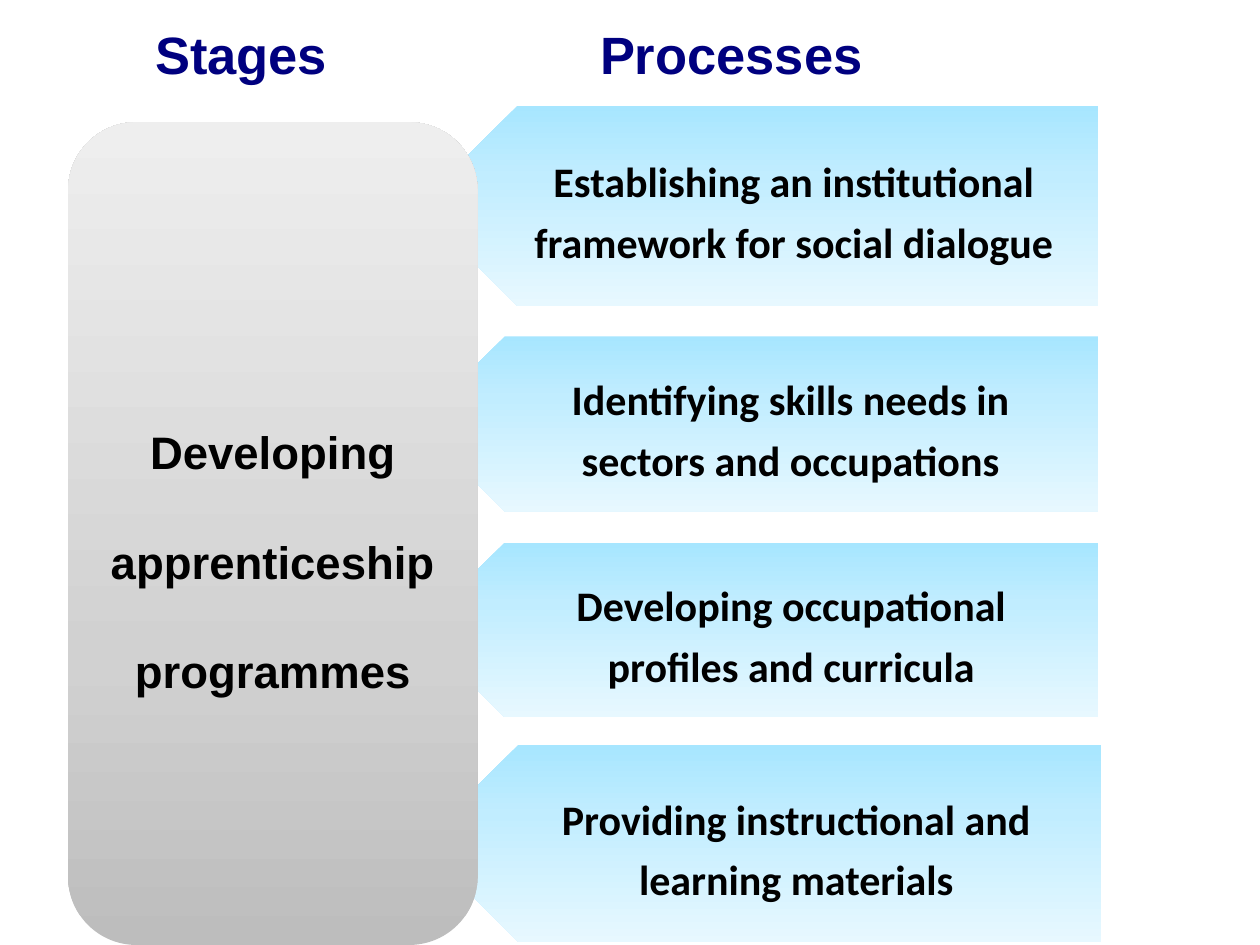
from copy import deepcopy

from pptx import Presentation
from pptx import util as u
from pptx.dml.color import RGBColor
from pptx.enum import shapes, text
from pptx.oxml.ns import qn

NAVY = RGBColor(0x00, 0x00, 0x7F)
BLACK = RGBColor(0x00, 0x00, 0x00)
BLUES = [RGBColor(0xA7, 0xE6, 0xFF), RGBColor(0xC1, 0xED, 0xFF), RGBColor(0xE7, 0xF8, 0xFF)]
GREYS = [RGBColor(0xBD, 0xBD, 0xBD), RGBColor(0xD1, 0xD1, 0xD1), RGBColor(0xEE, 0xEE, 0xEE)]
STOP_POSITIONS = [0, 0.35, 1]

HEADING = {"name": "Arial", "size": u.Pt(30), "bold": True}
STAGE = {"name": "Arial", "size": u.Pt(26), "bold": True}
PROCESS = {"name": "Calibri", "size": u.Pt(24), "bold": True}

HEADINGS = [("Stages", 0.25), ("Processes", 4.14)]
# Wording, arrow left, text left, top, height
PROCESSES = [
    ("Establishing an institutional framework for social dialogue", 3.31, 3.70, 0.84, 1.59),
    ("Identifying skills needs in sectors and occupations", 3.31, 3.65, 2.67, 1.39),
    ("Developing occupational profiles and curricula", 3.31, 3.66, 4.31, 1.38),
    ("Providing instructional and learning materials", 3.33, 3.72, 5.91, 1.57),
]
ARROW_WIDTH = 5.41


def set_all(target, values):
    for name, value in values.items():
        setattr(target, name, value)


def write_text(shape, wording, font, color, line_spacing, **frame_format):
    frame = shape.text_frame
    set_all(frame, {"word_wrap": True, **frame_format})
    paragraph = frame.paragraphs[0]
    set_all(paragraph, {"alignment": text.PP_ALIGN.CENTER, "line_spacing": line_spacing})
    run = paragraph.add_run()
    run.text = wording
    set_all(run.font, font)
    run.font.color.rgb = color


def add_text_box(slide, box):
    return slide.shapes.add_textbox(*map(u.Inches, box))


def add_gradient_shape(slide, kind, box, colors):
    shape = slide.shapes.add_shape(kind, *map(u.Inches, box))
    shape.shadow.inherit = False
    shape.line.fill.background()
    shape.fill.gradient()
    shape.fill.gradient_angle = 90
    # A new gradient has two stops; add the middle one
    stop_list = next(shape._element.iter(qn("a:gsLst")))
    stop_list.insert(1, deepcopy(stop_list[0]))
    for stop, color, position in zip(shape.fill.gradient_stops, colors, STOP_POSITIONS):
        stop.color.rgb = color
        stop.position = position
    return shape


def add_heading(slide, wording, left):
    box = add_text_box(slide, (left, 0, 3.33, 0.67))
    write_text(box, wording, HEADING, NAVY, 1.25,
               auto_size=text.MSO_AUTO_SIZE.SHAPE_TO_FIT_TEXT)


def add_process(slide, wording, left, text_left, top, height):
    arrow = add_gradient_shape(slide, shapes.MSO_SHAPE.PENTAGON,
                               (left, top, ARROW_WIDTH, height), BLUES)
    arrow.rotation = 180
    text_width = left + ARROW_WIDTH - text_left
    box = add_text_box(slide, (text_left, top, text_width, height))
    write_text(box, wording, PROCESS, BLACK, 1.2,
               vertical_anchor=text.MSO_ANCHOR.MIDDLE,
               margin_left=u.Inches(0.37), margin_right=u.Inches(0.19),
               margin_top=u.Inches(0.1), margin_bottom=u.Inches(0.1))


def add_stage(slide, wording):
    panel = add_gradient_shape(slide, shapes.MSO_SHAPE.ROUNDED_RECTANGLE,
                               (0.54, 0.97, 3.25, 6.53), GREYS)
    write_text(panel, wording, STAGE, BLACK, 2.0,
               vertical_anchor=text.MSO_ANCHOR.MIDDLE)


def main():
    presentation = Presentation()
    presentation.slide_width = u.Inches(10)
    presentation.slide_height = u.Inches(7.5)
    slide = presentation.slides.add_slide(presentation.slide_layouts[6])

    # Column headings
    for heading in HEADINGS:
        add_heading(slide, *heading)

    # Process arrows, with the stage panel over their tips
    for process in PROCESSES:
        add_process(slide, *process)
    add_stage(slide, "Developing apprenticeship programmes")

    presentation.save("out.pptx")


if __name__ == "__main__":
    main()
